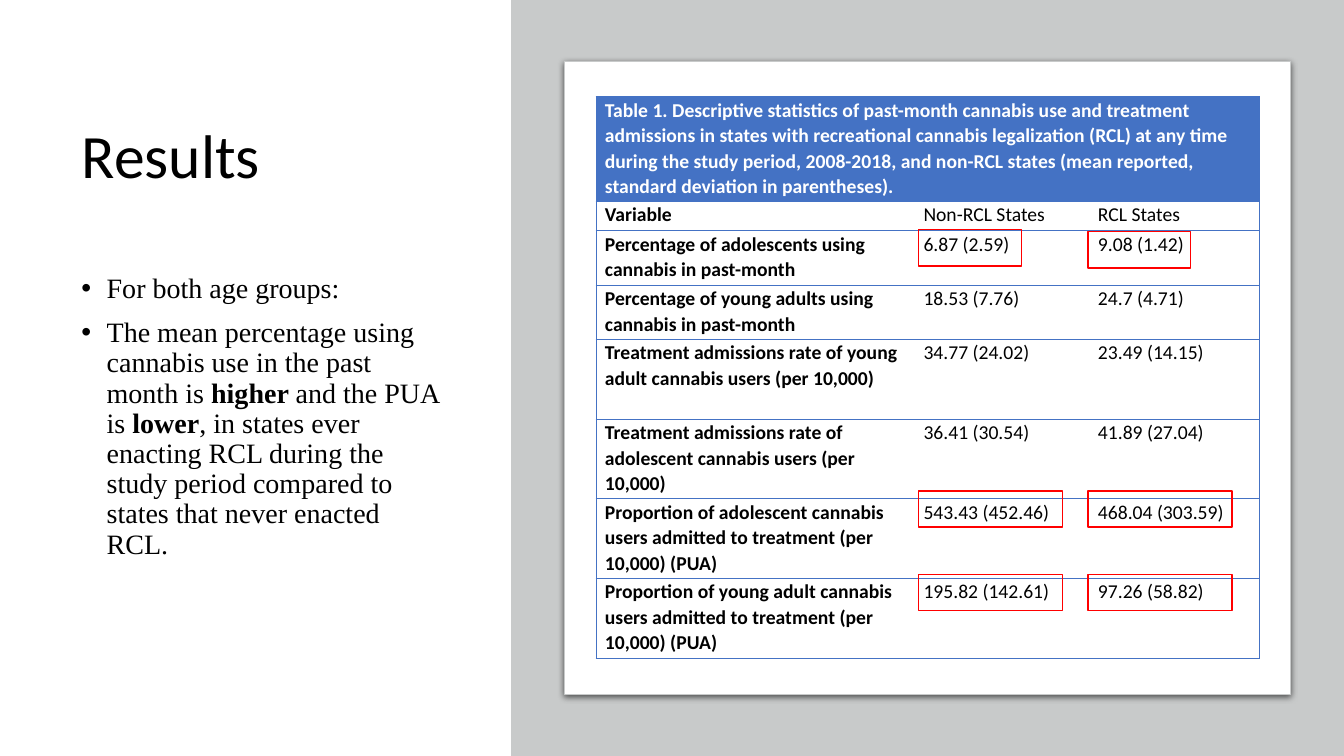
from lxml import etree
from pptx import Presentation
from pptx.dml.color import RGBColor
from pptx.enum import shapes, text
from pptx.oxml import parse_xml
from pptx.oxml.ns import nsdecls, qn
from pptx.util import Inches, Pt

BLACK = RGBColor(0x00, 0x00, 0x00)
WHITE = RGBColor(0xFF, 0xFF, 0xFF)
GRAY = RGBColor(0xC8, 0xCA, 0xCA)
BLUE = RGBColor(0x44, 0x72, 0xC4)
RED = RGBColor(0xFF, 0x00, 0x00)


def add_box(kind, left, top, width, height, fill=None, line=None, line_width=1):
    shape = slide.shapes.add_shape(kind, Inches(left), Inches(top), Inches(width), Inches(height))
    shape.shadow.inherit = False
    if fill is None:
        shape.fill.background()
    else:
        shape.fill.solid()
        shape.fill.fore_color.rgb = fill
    if line is None:
        shape.line.fill.background()
    else:
        shape.line.color.rgb = line
        shape.line.width = Pt(line_width)
    return shape


def set_borders(cell, visible_sides):
    properties = cell._tc.get_or_add_tcPr()
    for index, side in enumerate("LRTB"):
        paint = f'<a:solidFill><a:srgbClr val="{BLUE}"/></a:solidFill>' if side in visible_sides else "<a:noFill/>"
        border = parse_xml(f'<a:ln{side} {nsdecls("a")} w="{Pt(0.5)}">{paint}</a:ln{side}>')
        properties.insert(index, border)


presentation = Presentation()
presentation.slide_width = Inches(13.33)
presentation.slide_height = Inches(7.5)
slide = presentation.slides.add_slide(presentation.slide_layouts[5])

# Title
title = slide.shapes.title
title.left, title.top, title.width, title.height = (Inches(value) for value in (0.71, 0.69, 3.83, 1.77))
title.text_frame.text = "Results"
title.text_frame.vertical_anchor = text.MSO_ANCHOR.MIDDLE
paragraph = title.text_frame.paragraphs[0]
paragraph.alignment = text.PP_ALIGN.LEFT
paragraph.line_spacing = 0.9
paragraph.font.size = Pt(44)
paragraph.font.name = "Calibri"
paragraph.font.color.rgb = BLACK

# Findings: each bullet is a list of (text, bold) runs
bullets = [
    [("For both age groups:", False)],
    [
        ("The mean percentage using cannabis use in the past month is ", False),
        ("higher ", True),
        ("and the PUA is ", False),
        ("lower", True),
        (", in states ever enacting RCL during the study period compared to states that never enacted RCL.", False),
    ],
]
findings = slide.shapes.add_textbox(Inches(0.71), Inches(2.67), Inches(3.83), Inches(4.14)).text_frame
findings.word_wrap = True
for index, runs in enumerate(bullets):
    paragraph = findings.paragraphs[0] if index == 0 else findings.add_paragraph()
    paragraph.line_spacing = 0.9
    paragraph.space_before = Pt(10)
    paragraph.font.size = Pt(20)
    paragraph.font.name = "Times New Roman"
    paragraph.font.color.rgb = BLACK
    for words, bold in runs:
        run = paragraph.add_run()
        run.text = words
        run.font.bold = bold
    properties = paragraph._p.get_or_add_pPr()
    properties.set("marL", str(Inches(0.25)))
    properties.set("indent", str(-Inches(0.25)))
    etree.SubElement(properties, qn("a:buFont")).set("typeface", "Arial")
    etree.SubElement(properties, qn("a:buChar")).set("char", "•")
    # Default run properties come last in the schema order
    properties.append(properties.find(qn("a:defRPr")))

# Gray panel and white card with a soft shadow
add_box(shapes.MSO_SHAPE.RECTANGLE, 5.07, 0, 8.26, 7.5, fill=GRAY)
card = add_box(shapes.MSO_SHAPE.ROUNDED_RECTANGLE, 5.6, 0.61, 7.2, 6.28, WHITE, GRAY, 0.75)
card.adjustments[0] = 0
card._element.spPr.find(qn("a:effectLst")).append(parse_xml(
    f'<a:outerShdw {nsdecls("a")} blurRad="{Pt(4.5)}" dist="{Pt(1.5)}" dir="5400000" algn="t" rotWithShape="0">'
    '<a:srgbClr val="000000"><a:alpha val="63000"/></a:srgbClr></a:outerShdw>'))

# Statistics table
rows = [
    ("Table 1. Descriptive statistics of past-month cannabis use and treatment admissions in states with "
     "recreational cannabis legalization (RCL) at any time during the study period, 2008-2018, and non-RCL "
     "states (mean reported, standard deviation in parentheses).", "", ""),
    ("Variable", "Non-RCL States", "RCL States"),
    ("Percentage of adolescents using cannabis in past-month", "6.87 (2.59)", "9.08 (1.42)"),
    ("Percentage of young adults using cannabis in past-month", "18.53 (7.76)", "24.7 (4.71)"),
    ("Treatment admissions rate of young adult cannabis users (per 10,000)", "34.77 (24.02)", "23.49 (14.15)"),
    ("Treatment admissions rate of adolescent cannabis users (per 10,000)", "36.41 (30.54)", "41.89 (27.04)"),
    ("Proportion of adolescent cannabis users admitted to treatment (per 10,000) (PUA)",
     "543.43 (452.46)", "468.04 (303.59)"),
    ("Proportion of young adult cannabis users admitted to treatment (per 10,000) (PUA)",
     "195.82 (142.61)", "97.26 (58.82)"),
]
column_widths = [3.16, 1.73, 1.69]
row_heights = [1.04, 0.29, 0.54, 0.54, 0.79, 0.79, 0.79, 0.79]
table = slide.shapes.add_table(
    len(rows), len(column_widths), Inches(5.91), Inches(0.96), Inches(6.58), Inches(5.57)).table
table.horz_banding = False
for column, width in zip(table.columns, column_widths):
    column.width = Inches(width)
for row, height in zip(table.rows, row_heights):
    row.height = Inches(height)
table.cell(0, 0).merge(table.cell(0, 2))

for row_index, values in enumerate(rows):
    for column_index, value in enumerate(values):
        cell = table.cell(row_index, column_index)
        is_header = row_index == 0
        cell.margin_left = cell.margin_right = Inches(0.09)
        cell.margin_top = cell.margin_bottom = 0
        if is_header:
            cell.fill.solid()
            cell.fill.fore_color.rgb = BLUE
        else:
            cell.fill.background()
        set_borders(cell, "LRTB" if is_header else ("LTB", "TB", "RTB")[column_index])
        cell.text = value
        paragraph = cell.text_frame.paragraphs[0]
        paragraph.line_spacing = 1.07
        paragraph.font.size = Pt(14)
        paragraph.font.name = "Calibri"
        paragraph.font.bold = column_index == 0
        paragraph.font.color.rgb = WHITE if is_header else BLACK

# Red frames around the key values
for left, top, width in [
    (10.79, 2.3, 1.02), (9.11, 2.28, 1.02),
    (10.79, 4.87, 1.43), (9.11, 4.87, 1.43),
    (9.11, 5.7, 1.43), (10.79, 5.7, 1.43),
]:
    add_box(shapes.MSO_SHAPE.RECTANGLE, left, top, width, 0.36, line=RED)

presentation.save("out.pptx")
